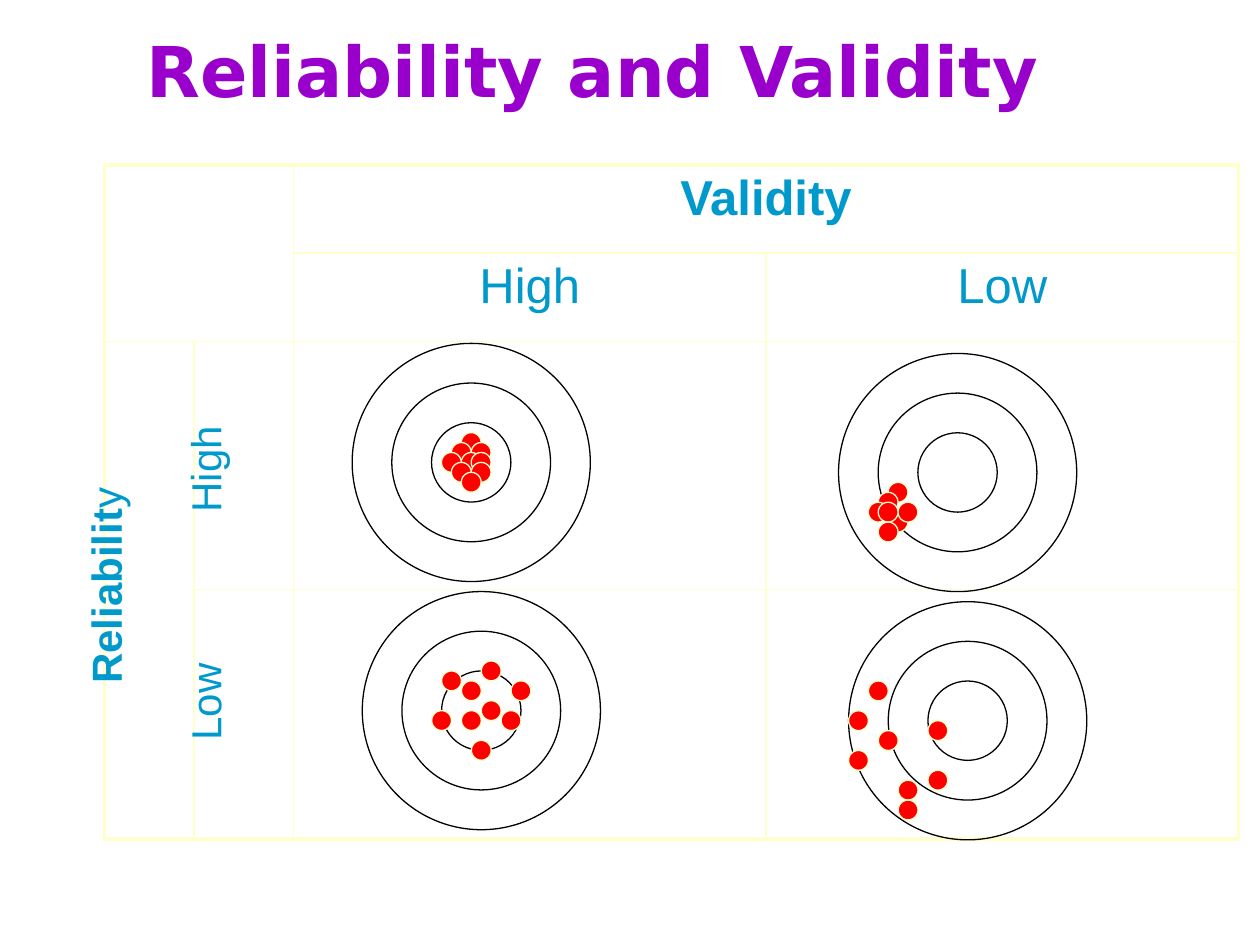
"""Build a slide that crosses reliability with validity using dartboard targets."""
from lxml.etree import SubElement
from pptx import Presentation
from pptx.dml.color import RGBColor
from pptx.enum.shapes import MSO_SHAPE
from pptx.enum.text import MSO_ANCHOR, MSO_AUTO_SIZE, PP_ALIGN
from pptx.oxml.ns import qn
from pptx.util import Inches, Pt


def style_font(font, size, color, bold=False, name="Arial"):
    font.name, font.size, font.bold = name, Pt(size), bold
    font.color.rgb = RGBColor.from_string(color)


def add_circle(shapes, center_x, center_y, diameter, line, fill=None):
    circle = shapes.add_shape(
        MSO_SHAPE.OVAL, int(center_x - diameter / 2), int(center_y - diameter / 2), int(diameter), int(diameter)
    )
    circle.shadow.inherit = False
    if fill:
        circle.fill.solid()
        circle.fill.fore_color.rgb = RGBColor.from_string(fill)
    else:
        circle.fill.background()
    circle.line.color.rgb = RGBColor.from_string(line)
    circle.line.width = Pt(0.75)


PURPLE, BLUE, CREAM, RED, BLACK = "9900CC", "0099CC", "FFFFCC", "FF0000", "000000"

presentation = Presentation()
presentation.slide_width, presentation.slide_height = Inches(10), Inches(7.5)
slide = presentation.slides.add_slide(presentation.slide_layouts[5])

title = slide.shapes.title
title.left, title.top, title.width, title.height = Inches(1.06), Inches(0.13), Inches(8.67), Inches(1.25)
title.text = "Reliability and Validity"
frame = title.text_frame
frame.auto_size = MSO_AUTO_SIZE.NONE
frame.vertical_anchor = MSO_ANCHOR.TOP
frame.margin_left, frame.margin_right, frame.margin_top = 0, Inches(1.39), Inches(0.09)
frame.paragraphs[0].alignment = PP_ALIGN.CENTER
style_font(frame.paragraphs[0].font, 40, PURPLE, True, "DejaVu Sans")

table = slide.shapes.add_table(4, 4, Inches(0.83), Inches(1.31), Inches(9), Inches(5.35)).table
table.first_row = table.horz_banding = False
for column, width in zip(table.columns, (0.71, 0.79, 3.75, 3.75)):
    column.width = Inches(width)
for row, height in zip(table.rows, (0.7, 0.7, 1.97, 1.98)):
    row.height = Inches(height)
table.cell(0, 0).merge(table.cell(1, 1))
table.cell(0, 2).merge(table.cell(0, 3))
table.cell(2, 0).merge(table.cell(3, 0))

for row in range(4):
    for column in range(4):
        cell = table.cell(row, column)
        if not cell.is_spanned:
            properties = cell._tc.get_or_add_tcPr()
            outer_edges = {
                "a:lnL": column == 0,
                "a:lnR": column + cell.span_width == 4,
                "a:lnT": row == 0,
                "a:lnB": row + cell.span_height == 4,
            }
            for tag, is_outer in outer_edges.items():
                border = SubElement(properties, qn(tag), w=str(Pt(2.25 if is_outer else 1)))
                SubElement(SubElement(border, qn("a:solidFill")), qn("a:srgbClr"), val=CREAM)
        cell.fill.background()

for row, column, text, bold in ((0, 2, "Validity", True), (1, 2, "High", False), (1, 3, "Low", False)):
    cell = table.cell(row, column)
    cell.text = text
    paragraph = cell.text_frame.paragraphs[0]
    paragraph.alignment = PP_ALIGN.CENTER
    style_font(paragraph.font, 28, BLUE, bold)

row_labels = (
    (-0.05, 4.39, 1.77, (("Reliabilit", True), ("y", False))),
    (1.18, 3.47, 0.89, (("High", False),)),
    (1.22, 5.32, 0.81, (("Low", False),)),
)
for left, top, width, pieces in row_labels:
    label = slide.shapes.add_textbox(Inches(left), Inches(top), Inches(width), Inches(0.5))
    label.rotation = 270
    label.text_frame.word_wrap = False
    label.text_frame.auto_size = MSO_AUTO_SIZE.SHAPE_TO_FIT_TEXT
    for text, bold in pieces:
        run = label.text_frame.paragraphs[0].add_run()
        run.text = text
        style_font(run.font, 24, BLUE, bold)

bullseye = Inches(0.63)
step = bullseye / 8
targets = (
    (3.74, 3.67, ((0, -2), (-1, -1), (1, -1), (0, 0), (-2, 0), (1, 0), (1, 1), (-1, 1), (0, 2))),
    (3.82, 5.64, ((-3, -3), (1, -4), (-1, -2), (0, 4), (3, 1), (-4, 1), (4, -2), (1, 0), (-1, 1))),
    (7.6, 3.75, ((-6, 2), (-6, 5), (-7, 3), (-8, 4), (-5, 4), (-7, 4), (-7, 6))),
    (7.68, 5.72, ((-8, 2), (-6, 7), (-11, 0), (-3, 6), (-11, 4), (-6, 9), (-3, 1), (-9, -3))),
)
for x, y, hits in targets:
    center_x, center_y = Inches(x), Inches(y)
    rings = slide.shapes.add_group_shape()
    for ring in (3, 2, 1):
        add_circle(rings.shapes, center_x, center_y, ring * bullseye, BLACK)
    for across, down in hits:
        add_circle(slide.shapes, center_x + across * step, center_y + down * step, 2 * step, CREAM, RED)

presentation.save("out.pptx")
